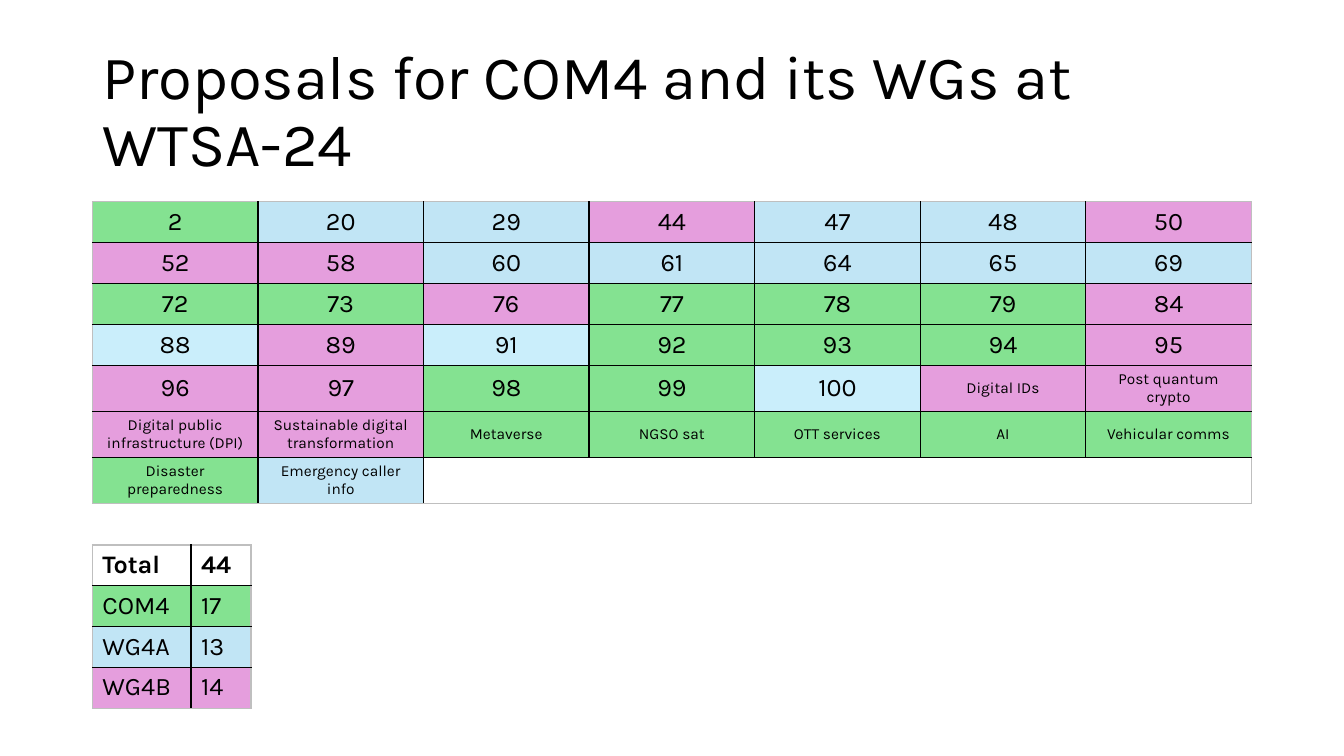
from dataclasses import dataclass
from typing import Optional

from lxml import etree
from pptx import Presentation
from pptx.dml.color import RGBColor
from pptx.enum import text
from pptx.oxml import ns
from pptx.util import Pt

PX = 9525
FONT = "Karla"
BLACK = RGBColor(0x00, 0x00, 0x00)
EDGE = RGBColor(0xBF, 0xBF, 0xBF)
GREEN = RGBColor(0x84, 0xE2, 0x91)
BLUE = RGBColor(0xC1, 0xE5, 0xF5)
PALE = RGBColor(0xCA, 0xEE, 0xFB)
PINK = RGBColor(0xE5, 0x9E, 0xDD)

LEFT, WIDTH, ROW_HEIGHT = 88, 1104, 39


@dataclass(frozen=True)
class Entry:
    label: str
    color: Optional[RGBColor] = None
    size: int = 18
    bold: bool = False


@dataclass(frozen=True)
class Grid:
    top: int
    width: int
    shares: list[int]
    rows: list[list[Entry]]
    align: text.PP_ALIGN
    anchor: text.MSO_ANCHOR


def entries(color_codes: str, *labels: str) -> list[Entry]:
    colors = {"G": GREEN, "B": BLUE, "L": PALE, "P": PINK}
    return [
        Entry(label, colors[code], 18 if label.isdigit() else 11)
        for code, label in zip(color_codes, labels, strict=True)
    ]


def summary(label: str, count: str, color: Optional[RGBColor], bold: bool = False) -> list[Entry]:
    return [Entry(value, color, bold=bold) for value in (label, count)]


PROPOSALS = Grid(
    192, WIDTH, [1] * 7,
    [
        entries("GBBPBBP", "2", "20", "29", "44", "47", "48", "50"),
        entries("PPBBBBB", "52", "58", "60", "61", "64", "65", "69"),
        entries("GGPGGGP", "72", "73", "76", "77", "78", "79", "84"),
        entries("LPLGGGP", "88", "89", "91", "92", "93", "94", "95"),
        entries("PPGGLPP", "96", "97", "98", "99", "100", "Digital IDs", "Post quantum crypto"),
        entries(
            "PPGGGGG", "Digital public infrastructure (DPI)", "Sustainable digital transformation",
            "Metaverse", "NGSO sat", "OTT services", "AI", "Vehicular comms",
        ),
        entries("GB", "Disaster preparedness", "Emergency caller info"),
    ],
    text.PP_ALIGN.CENTER, text.MSO_ANCHOR.MIDDLE,
)
TOTALS = Grid(
    519, 151, [94, 57],
    [
        summary("Total", "44", None, bold=True),
        summary("COM4", "17", GREEN),
        summary("WG4A", "13", BLUE),
        summary("WG4B", "14", PINK),
    ],
    text.PP_ALIGN.LEFT, text.MSO_ANCHOR.TOP,
)


def emu(px: int) -> int:
    return px * PX


def set_borders(cell, outer_sides: dict[str, bool]) -> None:
    properties = cell._tc.get_or_add_tcPr()
    for side, is_outer in outer_sides.items():
        line = etree.SubElement(properties, ns.qn(f"a:ln{side}"), w=str(Pt(1)))
        fill = etree.SubElement(line, ns.qn("a:solidFill"))
        etree.SubElement(fill, ns.qn("a:srgbClr"), val=str(EDGE if is_outer else BLACK))


def fill_cell(cell, entry: Entry, grid: Grid) -> None:
    if entry.color is None:
        cell.fill.background()
    else:
        cell.fill.solid()
        cell.fill.fore_color.rgb = entry.color
    cell.vertical_anchor = grid.anchor
    cell.text = entry.label
    paragraph = cell.text_frame.paragraphs[0]
    paragraph.alignment = grid.align
    paragraph.font.name = FONT
    paragraph.font.size = Pt(entry.size)
    paragraph.font.bold = entry.bold
    paragraph.font.color.rgb = BLACK


def draw_grid(slide, grid: Grid) -> None:
    row_count, column_count = len(grid.rows), len(grid.shares)
    table = slide.shapes.add_table(
        row_count, column_count,
        emu(LEFT), emu(grid.top), emu(grid.width), emu(ROW_HEIGHT * row_count),
    ).table
    table.first_row = table.horz_banding = False
    for column, share in zip(table.columns, grid.shares):
        column.width = emu(grid.width) * share // sum(grid.shares)
    for r, row in enumerate(grid.rows):
        table.rows[r].height = emu(ROW_HEIGHT)
        blanks = column_count - len(row)
        if blanks:
            table.cell(r, len(row)).merge(table.cell(r, column_count - 1))
        for c, entry in enumerate(row + [Entry("")] * blanks):
            cell = table.cell(r, c)
            set_borders(cell, {
                "L": c == 0,
                "R": c == column_count - 1 or c >= len(row),
                "T": r == 0,
                "B": r == row_count - 1,
            })
            fill_cell(cell, entry, grid)


def draw_title(slide, title: str) -> None:
    frame = slide.shapes.add_textbox(emu(LEFT), emu(38), emu(WIDTH), emu(139)).text_frame
    frame.word_wrap = True
    frame.vertical_anchor = text.MSO_ANCHOR.MIDDLE
    frame.text = title
    paragraph = frame.paragraphs[0]
    paragraph.line_spacing = 0.9
    paragraph.font.name = FONT
    paragraph.font.size = Pt(44)
    paragraph.font.color.rgb = BLACK


def main() -> None:
    deck = Presentation()
    deck.slide_width, deck.slide_height = emu(1280), emu(720)
    slide = deck.slides.add_slide(deck.slide_layouts[6])
    for grid in (PROPOSALS, TOTALS):
        draw_grid(slide, grid)
    draw_title(slide, "Proposals for COM4 and its WGs at WTSA-24")
    deck.save("out.pptx")


if __name__ == "__main__":
    main()
